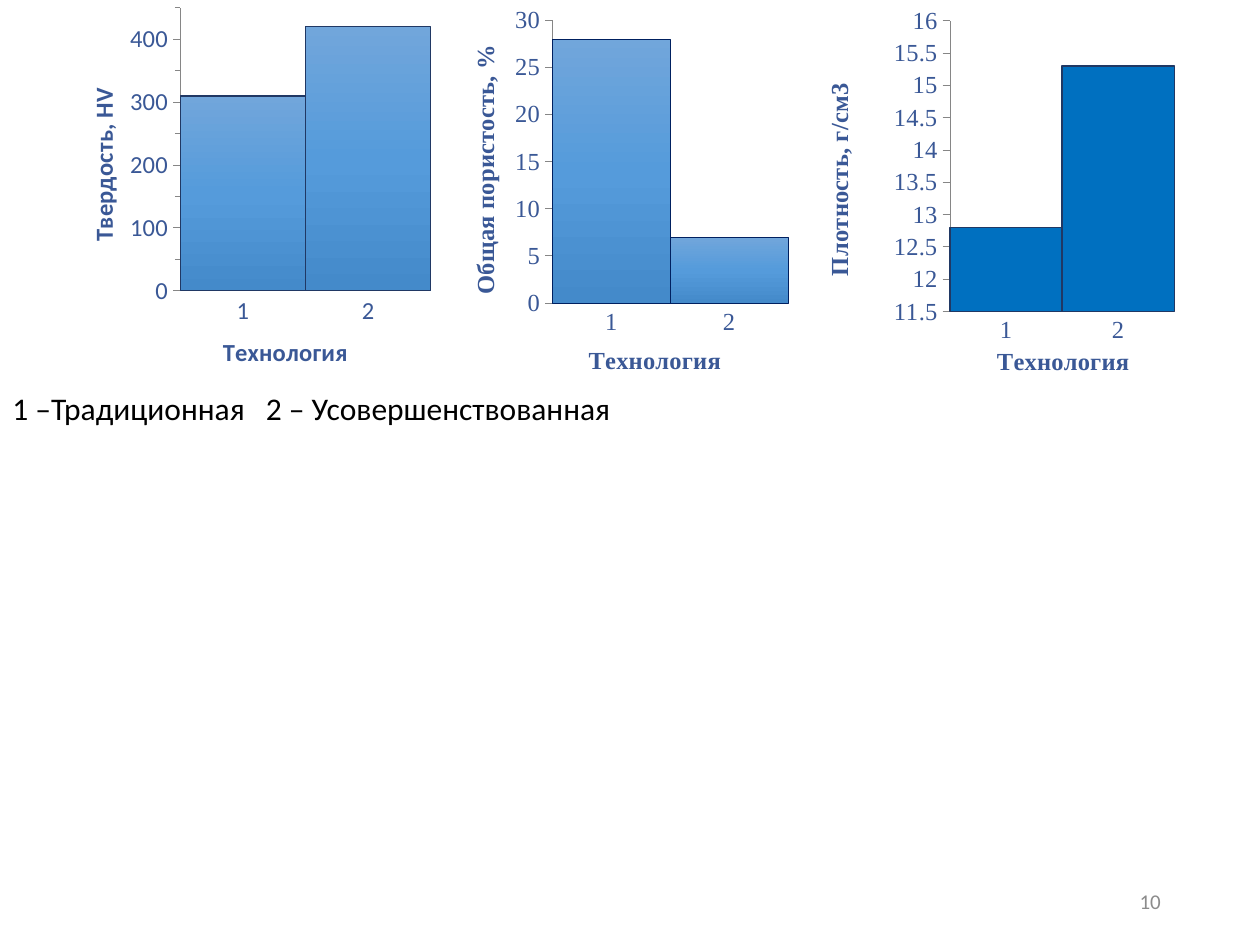
from copy import deepcopy

from pptx import Presentation
from pptx.chart.data import CategoryChartData
from pptx.dml.color import RGBColor
from pptx.enum import chart as ch, text as tx
from pptx.oxml import parse_xml
from pptx.oxml.ns import nsdecls, qn
from pptx.util import Cm, Pt

INK = "3A5896"
NAVY = "203864"
BLEND = ("71A6DB", "559BDB", "448ACA")
SANS, SERIF = "Calibri", "Times New Roman"


def color(code):
    return RGBColor.from_string(code)


def style(font, name, size, code, bold=False):
    font.name, font.size, font.bold = name, Pt(size), bold
    font.color.rgb = color(code)


def place(owner, index, x, y, w=None, h=None):
    for old in owner.findall(qn("c:layout")):
        owner.remove(old)
    inner = '<c:layoutTarget val="inner"/>' if w else ""
    modes = '<c:xMode val="edge"/><c:yMode val="edge"/>'
    spots = f'<c:x val="{x}"/><c:y val="{y}"/>'
    size = f'<c:w val="{w}"/><c:h val="{h}"/>' if w else ""
    owner.insert(index, parse_xml(
        f'<c:layout {nsdecls("c")}><c:manualLayout>{inner}{modes}{spots}{size}'
        "</c:manualLayout></c:layout>"))


def paint(series, fill, line, width):
    look = series.format
    if isinstance(fill, str):
        look.fill.solid()
        look.fill.fore_color.rgb = color(fill)
    else:
        look.fill.gradient()
        look.fill.gradient_angle = 270
        stops = series._element.find(".//" + qn("a:gsLst"))
        stops.append(deepcopy(stops[0]))
        for stop, code, spot in zip(look.fill.gradient_stops, fill, (0, 0.5, 1)):
            stop.color.rgb = color(code)
            stop.position = spot
    look.line.color.rgb = color(line)
    look.line.width = Pt(width)


def label(axis, words, name, spot):
    title = axis.axis_title
    title.text_frame.text = words
    style(title.text_frame.paragraphs[0].runs[0].font, name, 14, INK, True)
    place(title._element, 1, *spot)


def add_bars(slide, box, name, unit, values, scale, fill, line, plot, spots):
    data = CategoryChartData()
    data.categories = ["1", "2"]
    data.add_series("Series 1", values)
    chart = slide.shapes.add_chart(
        ch.XL_CHART_TYPE.COLUMN_CLUSTERED, *map(Cm, box), data).chart
    chart.has_legend = chart.has_title = False
    style(chart.font, name, 14, INK)
    bars = chart.plots[0]
    bars.gap_width = 0
    bars.vary_by_categories = False
    paint(bars.series[0], fill, *line)

    base, side = chart.category_axis, chart.value_axis
    base.major_tick_mark = ch.XL_TICK_MARK.NONE
    side.major_tick_mark = ch.XL_TICK_MARK.OUTSIDE
    side.has_major_gridlines = False
    side.minimum_scale, side.maximum_scale, side.major_unit, minor = scale
    if minor:
        side.minor_unit = minor
        side.minor_tick_mark = ch.XL_TICK_MARK.OUTSIDE
    for axis, words, spot in zip((base, side), ("Технология", unit), spots):
        axis.format.line.color.rgb = color("868686")
        axis.format.line.width = Pt(0.5)
        label(axis, words, name, spot)
    place(chart._chartSpace.chart.plotArea, 0, *plot)


def add_text(slide, box, words, size, code, align=None, tab=None):
    frame = slide.shapes.add_textbox(*map(Cm, box)).text_frame
    frame.word_wrap = True
    frame.text = words
    para = frame.paragraphs[0]
    if align:
        para.alignment = align
    if tab:
        para.line_spacing = 1.15
        para._p.get_or_add_pPr().append(parse_xml(
            f'<a:tabLst {nsdecls("a")}><a:tab pos="{Cm(tab)}" algn="l"/></a:tabLst>'))
    style(para.runs[0].font, SANS, size, code)
    return frame


def main():
    deck = Presentation()
    deck.slide_width, deck.slide_height = Cm(25.4), Cm(19.05)
    slide = deck.slides.add_slide(deck.slide_layouts[6])

    page = add_text(slide, (17.93, 17.65, 5.72, 1.02), "10", 12, "8C8C8C",
                    tx.PP_ALIGN.RIGHT)
    page.vertical_anchor = tx.MSO_ANCHOR.MIDDLE

    add_bars(slide, (1.19, 0, 7.65, 8.03), SANS, "Твердость, HV",
             (310, 420), (0, 450, 100, 50), BLEND, (NAVY, 0.75),
             (0.32, 0.02, 0.66, 0.71), ((0.42, 0.83), (0.06, 0.21)))
    add_bars(slide, (8.94, 0, 7.09, 8.15), SERIF, "Общая пористость, %",
             (28, 7), (0, 30, 5, None), BLEND, ("002060", 0.5),
             (0.31, 0.05, 0.67, 0.7), ((0.4, 0.84), (0.06, 0.1)))
    add_bars(slide, (16.03, 0, 7.8, 8.38), SERIF, "Плотность, г/см3",
             (12.8, 15.3), (11.5, 16, 0.5, None), "0070C0", (NAVY, 0.75),
             (0.4, 0.05, 0.58, 0.7), ((0.51, 0.82), (0.06, 0.19)))

    add_text(slide, (0, 7.6, 13.34, 1.14),
             "1 –Традиционная\t2 – Усовершенствованная", 18, "000000", tab=5.11)
    deck.save("out.pptx")


if __name__ == "__main__":
    main()
